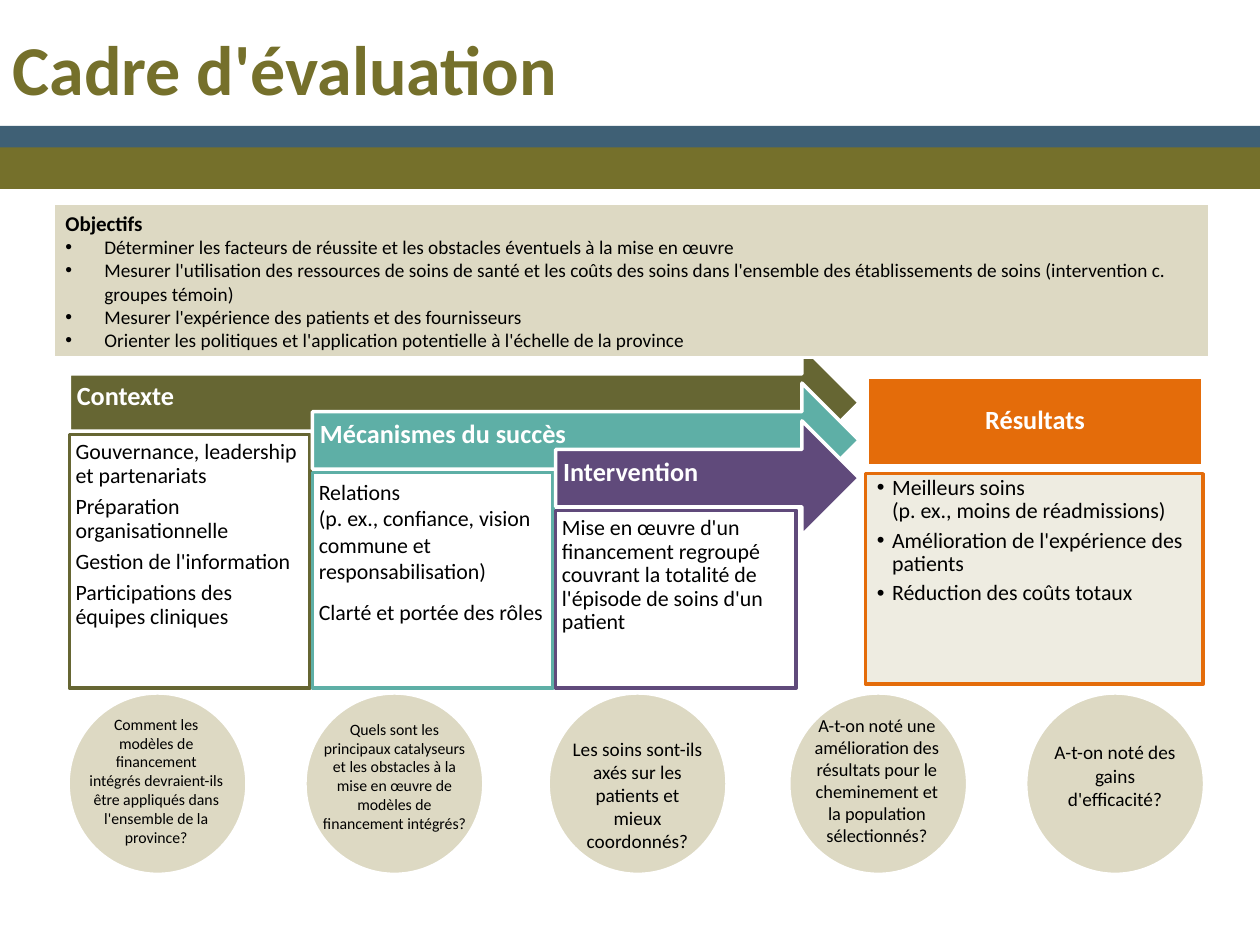
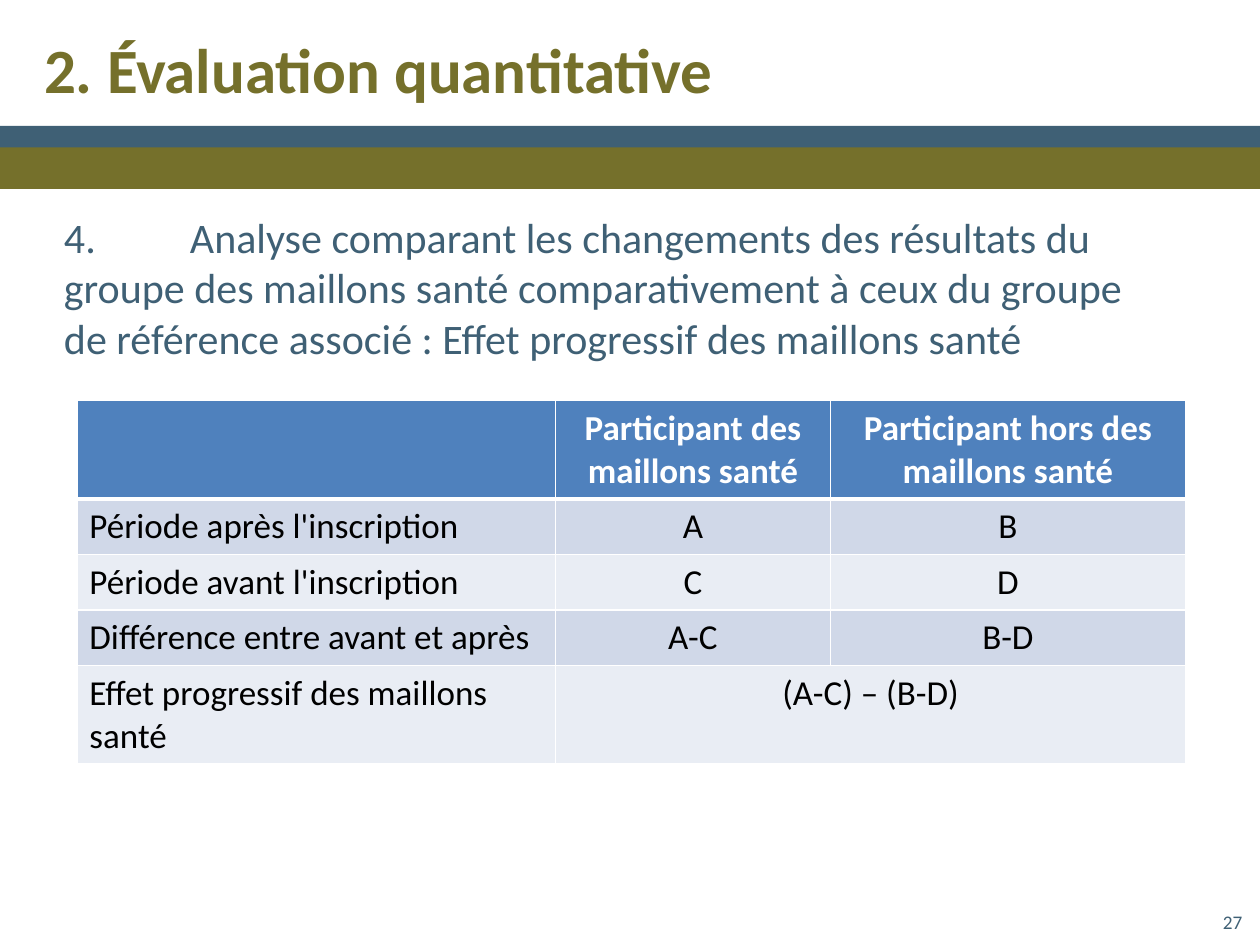
from dataclasses import dataclass

from lxml import etree
from pptx import Presentation
from pptx.dml.color import RGBColor
from pptx.enum.shapes import MSO_SHAPE
from pptx.enum.text import MSO_ANCHOR, MSO_AUTO_SIZE, PP_ALIGN
from pptx.oxml.ns import qn
from pptx.util import Inches, Pt

RECT, OVAL, ARROW = MSO_SHAPE.RECTANGLE, MSO_SHAPE.OVAL, MSO_SHAPE.RIGHT_ARROW
LEFT, CENTER, RIGHT = PP_ALIGN.LEFT, PP_ALIGN.CENTER, PP_ALIGN.RIGHT
TOP, MIDDLE = MSO_ANCHOR.TOP, MSO_ANCHOR.MIDDLE
NO_AUTOFIT = MSO_AUTO_SIZE.NONE

WHITE = RGBColor(0xFF, 0xFF, 0xFF)
BLACK = RGBColor(0x00, 0x00, 0x00)
BLUE = RGBColor(0x3F, 0x60, 0x75)
OLIVE = RGBColor(0x75, 0x70, 0x2B)
SAND = RGBColor(0xDD, 0xD9, 0xC3)
CREAM = RGBColor(0xEE, 0xEC, 0xE1)
MOSS = RGBColor(0x66, 0x66, 0x33)
TEAL = RGBColor(0x5E, 0xAF, 0xA6)
PURPLE = RGBColor(0x60, 0x4A, 0x7B)
ORANGE = RGBColor(0xE4, 0x6C, 0x0A)
HEADER_BLUE = RGBColor(0x4F, 0x81, 0xBD)
ROW_DARK = RGBColor(0xD0, 0xD8, 0xE8)
ROW_LIGHT = RGBColor(0xE9, 0xED, 0xF4)

FONT = "Calibri"
DEFAULT_INSETS = (0.1, 0.05, 0.1, 0.05)
CARD_INSETS = (0.05, 0.05, 0.05, 0.05)


@dataclass
class Style:
    size: float
    color: RGBColor = BLACK
    bold: bool = False
    align: PP_ALIGN = LEFT
    spacing: float = 1.0
    after: float = 0
    indent: float = 0
    tab: float = 0


@dataclass
class Box:
    left: float
    top: float
    width: float
    height: float


@dataclass
class Tier:
    label: str
    color: RGBColor
    lines: list[str]


@dataclass
class Question:
    text: str
    circle_left: float
    text_left: float
    text_top: float
    width: float
    size: float


LABEL = Style(15, WHITE, True, spacing=0.9)
CARD = Style(12.5, spacing=0.9, after=4.4)

TIERS = [
    Tier("Contexte", MOSS, [
        "Gouvernance, leadership et partenariats",
        "Préparation organisationnelle",
        "Gestion de l'information",
        "Participations des équipes cliniques",
    ]),
    Tier("Mécanismes du succès", TEAL, [
        "Relations \v(p. ex., confiance, vision commune et responsabilisation)",
        "Clarté et portée des rôles",
    ]),
    Tier("Intervention", PURPLE, [
        "Mise en œuvre d'un financement regroupé couvrant la totalité de l'épisode de soins d'un patient",
    ]),
]

OBJECTIVES = [
    "Objectifs",
    "Déterminer les facteurs de réussite et les obstacles éventuels à la mise en œuvre",
    "Mesurer l'utilisation des ressources de soins de santé et les coûts des soins dans l'ensemble "
    "des établissements de soins (intervention c. groupes témoin)",
    "Mesurer l'expérience des patients et des fournisseurs",
    "Orienter les politiques et l'application potentielle à l'échelle de la province",
]

RESULTS = [
    "Meilleurs soins\v(p. ex., moins de réadmissions)",
    "Amélioration de l'expérience des patients",
    "Réduction des coûts totaux",
]

QUESTIONS = [
    Question("Comment les modèles de financement intégrés devraient-ils être appliqués "
             "dans l'ensemble de la province?", 0.54, 0.61, 5.62, 1.26, 9),
    Question("Quels sont les principaux catalyseurs et les obstacles à la mise en œuvre "
             "de modèles de financement intégrés?", 2.42, 2.42, 5.66, 1.42, 9),
    Question("Les soins sont-ils axés sur les patients et mieux coordonnés?",
             4.35, 4.43, 5.8, 1.26, 11),
    Question("A-t-on noté une amélioration des résultats pour le cheminement et la population "
             "sélectionnés?", 6.26, 6.33, 5.62, 1.26, 10.5),
    Question("A-t-on noté des gains d'efficacité?", 8.14, 8.22, 5.83, 1.26, 11),
]

ANALYSIS = ("4.\tAnalyse comparant les changements des résultats du groupe des maillons santé "
            "comparativement à ceux du groupe de référence associé : "
            "Effet progressif des maillons santé")

TABLE_ROWS = [
    ["", "Participant des maillons santé", "Participant hors des maillons santé"],
    ["Période après l'inscription", "A", "B"],
    ["Période avant l'inscription", "C", "D"],
    ["Différence entre avant et après", "A-C", "B-D"],
    ["Effet progressif des maillons santé", "(A-C) – (B-D)", ""],
]
COLUMN_WIDTHS = [3.8, 2.18, 2.82]
ROW_HEIGHTS = [0.77, 0.44, 0.44, 0.44, 0.77]


def inches(box: Box) -> tuple:
    return Inches(box.left), Inches(box.top), Inches(box.width), Inches(box.height)


def format_paragraph(p, style: Style) -> None:
    p_pr = p._p.get_or_add_pPr()
    if style.indent:
        p_pr.set("marL", str(Inches(style.indent)))
        p_pr.set("indent", str(-Inches(style.indent)))
        etree.SubElement(p_pr, qn("a:buFont")).set("typeface", "Arial")
        etree.SubElement(p_pr, qn("a:buChar")).set("char", "•")
    if style.tab:
        tabs = etree.SubElement(p_pr, qn("a:tabLst"))
        etree.SubElement(tabs, qn("a:tab"), pos=str(Inches(style.tab)), algn="l")
    p.alignment = style.align
    p.line_spacing = style.spacing
    p.space_before = Pt(0)
    p.space_after = Pt(style.after)
    for r in p.runs:
        r.font.name = FONT
        r.font.size = Pt(style.size)
        r.font.bold = style.bold
        r.font.color.rgb = style.color


def write(tf, lines: list[str], style: Style, anchor=TOP, insets: tuple = DEFAULT_INSETS) -> None:
    tf.word_wrap = True
    tf.auto_size = NO_AUTOFIT
    tf.vertical_anchor = anchor
    tf.margin_left, tf.margin_top, tf.margin_right, tf.margin_bottom = map(Inches, insets)
    tf.text = "\n".join(lines)
    for p in tf.paragraphs:
        format_paragraph(p, style)


def add_text(s, box: Box, text: str, style: Style, anchor=TOP) -> None:
    write(s.shapes.add_textbox(*inches(box)).text_frame, [text], style, anchor)


def add_block(s, kind, box: Box, fill: RGBColor, line: RGBColor | None = WHITE):
    sp = s.shapes.add_shape(kind, *inches(box))
    sp.shadow.inherit = False
    sp.fill.solid()
    sp.fill.fore_color.rgb = fill
    if line is None:
        sp.line.fill.background()
    else:
        sp.line.color.rgb = line
        sp.line.width = Pt(2)
    return sp


def add_slide(prs, title: str, box: Box, size: float):
    s = prs.slides.add_slide(prs.slide_layouts[5])
    add_block(s, RECT, Box(0, 0, 10, 1), WHITE)
    add_block(s, RECT, Box(0, 1, 10, 0.5), BLUE, None)
    add_block(s, RECT, Box(0, 1.17, 10, 0.33), OLIVE, None)
    sp = s.shapes.title
    s.shapes._spTree.append(sp._element)
    sp.left, sp.top, sp.width, sp.height = inches(box)
    write(sp.text_frame, [title], Style(size, OLIVE, True), MIDDLE)
    return s


def add_tier(s, i: int, tier: Tier) -> None:
    left, top = 0.55 + 1.93 * i, 2.74 + 0.3 * i
    arrow = add_block(s, ARROW, Box(left, top, 6.82 - left, 0.91), tier.color)
    write(arrow.text_frame, [tier.label], LABEL, MIDDLE, (0.06, 0.06, 0.28, 0.14))
    card_top = top + 0.71
    card = add_block(s, RECT, Box(left, card_top, 1.91, 5.46 - card_top), WHITE, tier.color)
    write(card.text_frame, tier.lines, CARD, insets=CARD_INSETS)
    if i == 1:
        p = card.text_frame.paragraphs[0]
        p.line_spacing = 1.0
        p.space_after = Pt(10)


def add_results(s) -> None:
    head = add_block(s, RECT, Box(6.88, 2.99, 2.67, 0.71), ORANGE)
    write(head.text_frame, ["Résultats"], Style(15, WHITE, True, CENTER, 0.9), MIDDLE)
    card = add_block(s, RECT, Box(6.87, 3.76, 2.68, 1.67), CREAM, ORANGE)
    style = Style(12.5, spacing=0.9, after=3.25, indent=0.12)
    write(card.text_frame, RESULTS, style, insets=(0.09, 0.02, 0.1, 0.02))


def add_objectives(s) -> None:
    panel = add_block(s, RECT, Box(0.42, 1.61, 9.18, 1.23), SAND)
    tf = panel.text_frame
    write(tf, OBJECTIVES, Style(11), insets=(0.1, 0.06, 0.1, 0.05))
    format_paragraph(tf.paragraphs[0], Style(12, bold=True))
    for p in tf.paragraphs[1:]:
        format_paragraph(p, Style(11, indent=0.31))


def add_question(s, q: Question) -> None:
    add_block(s, OVAL, Box(q.circle_left, 5.5, 1.42, 1.44), SAND)
    add_text(s, Box(q.text_left, q.text_top, q.width, 1.16), q.text, Style(q.size, align=CENTER))


def set_borders(cell, bottom: float) -> None:
    tc_pr = cell._tc.get_or_add_tcPr()
    for i, (side, width) in enumerate([("L", 1), ("R", 1), ("T", 1), ("B", bottom)]):
        ln = etree.Element(qn(f"a:ln{side}"), w=str(Pt(width)))
        fill = etree.SubElement(ln, qn("a:solidFill"))
        etree.SubElement(fill, qn("a:srgbClr")).set("val", str(WHITE))
        tc_pr.insert(i, ln)


def add_effect_table(s) -> None:
    box = Box(0.61, 3.18, sum(COLUMN_WIDTHS), sum(ROW_HEIGHTS))
    table = s.shapes.add_table(len(ROW_HEIGHTS), len(COLUMN_WIDTHS), *inches(box)).table
    for column, width in zip(table.columns, COLUMN_WIDTHS):
        column.width = Inches(width)
    for i, values in enumerate(TABLE_ROWS):
        table.rows[i].height = Inches(ROW_HEIGHTS[i])
        header = i == 0
        fill = HEADER_BLUE if header else ROW_DARK if i % 2 else ROW_LIGHT
        for j, value in enumerate(values):
            cell = table.cell(i, j)
            cell.text = value
            cell.fill.solid()
            cell.fill.fore_color.rgb = fill
            style = Style(20, WHITE if header else BLACK, header, CENTER if j else LEFT)
            format_paragraph(cell.text_frame.paragraphs[0], style)
            set_borders(cell, 3 if header else 1)
    table.cell(4, 1).merge(table.cell(4, 2))


def build_framework(prs) -> None:
    s = add_slide(prs, "Cadre d'évaluation", Box(0, 0.16, 8.03, 0.75), 40)
    for i, tier in enumerate(TIERS):
        add_tier(s, i, tier)
    add_results(s)
    add_objectives(s)
    for q in QUESTIONS:
        add_question(s, q)


def build_quantitative(prs) -> None:
    s = add_slide(prs, "2. Évaluation quantitative", Box(0.25, 0.17, 7.67, 0.75), 36)
    add_text(s, Box(0.41, 1.63, 9, 1.4), ANALYSIS, Style(24, BLUE, tab=1))
    add_effect_table(s)
    add_text(s, Box(7.63, 7.12, 2.33, 0.4), "27", Style(11, BLUE, align=RIGHT), MIDDLE)


def main() -> None:
    prs = Presentation()
    prs.slide_width, prs.slide_height = Inches(10), Inches(7.5)
    build_framework(prs)
    build_quantitative(prs)
    prs.save("out.pptx")


if __name__ == "__main__":
    main()
